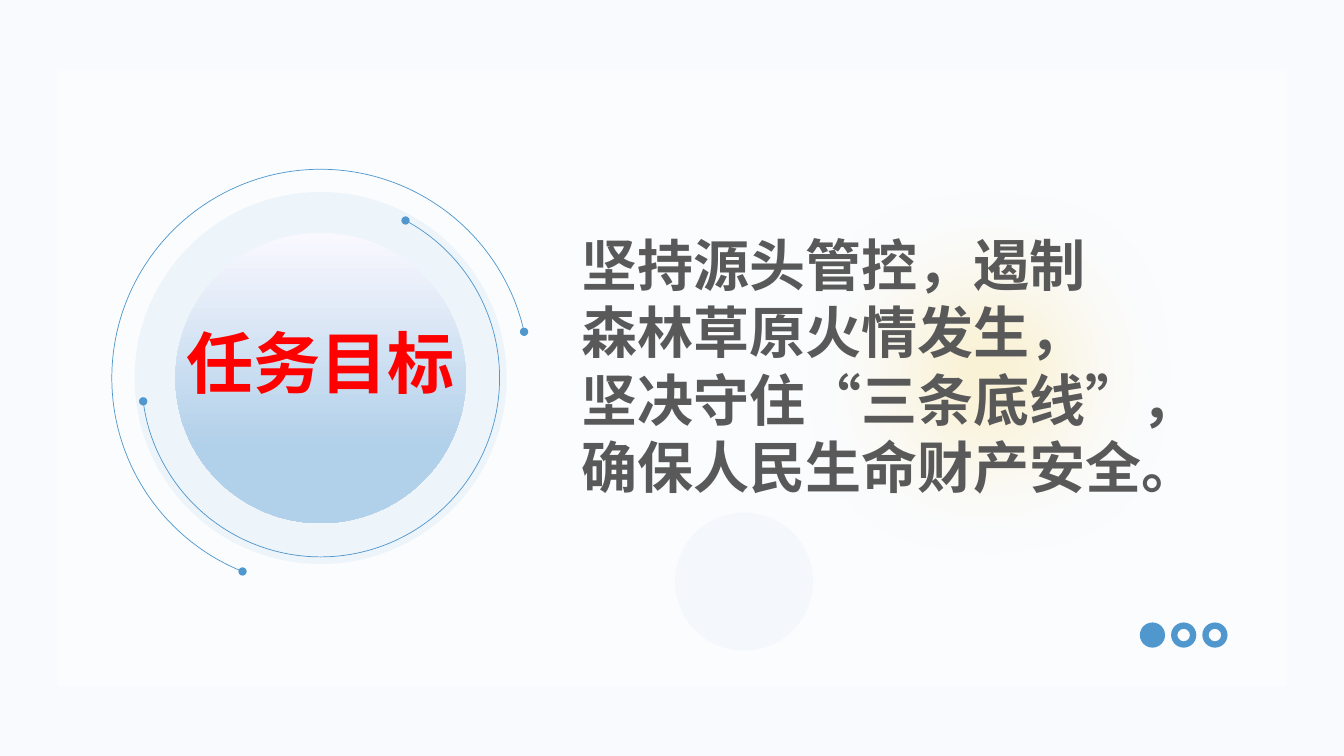
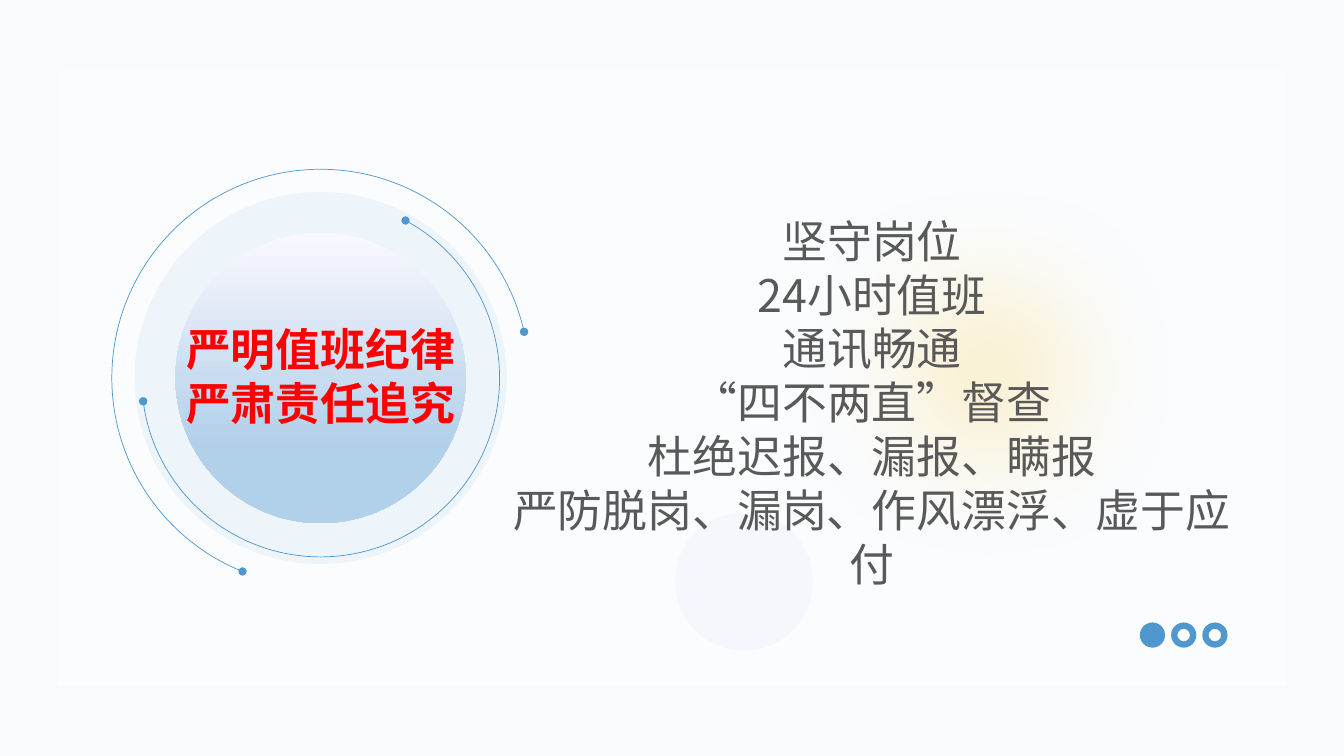
from lxml.etree import SubElement
from pptx import Presentation
from pptx.dml.color import RGBColor
from pptx.enum.shapes import MSO_SHAPE as Shape
from pptx.enum.text import PP_ALIGN as Align
from pptx.oxml.ns import qn
from pptx.util import Inches, Pt

BACKGROUND = "F8FAFE"
WHITE = "FFFFFF"
BLUE = "4F97CD"
PALE_BLUE = "B1D0E9"
LILAC_WHITE = "FAF8FF"
GOLD = "FFC000"
RED = "FF0000"
GREY = "595959"
TITLE_FONT = "Montserrat"
BODY_FONT = "Noto Sans CJK SC"
DIAL_CENTER = (3.18, 3.75)


def color(value):
    return RGBColor.from_string(value)


class SlideBuilder:
    def __init__(self, deck):
        self.deck = deck
        self.slide = None

    def new_slide(self):
        self.slide = self.deck.slides.add_slide(self.deck.slide_layouts[6])
        fill = self.slide.background.fill
        fill.solid()
        fill.fore_color.rgb = color(BACKGROUND)

    def shape(self, kind, left, top, width, height, fill=None, opacity=100):
        shape = self.slide.shapes.add_shape(
            kind, Inches(left), Inches(top), Inches(width), Inches(height))
        shape.shadow.inherit = False
        shape.line.fill.background()
        if fill is None:
            shape.fill.background()
            return shape
        shape.fill.solid()
        shape.fill.fore_color.rgb = color(fill)
        if opacity < 100:
            tint = shape.fill._xPr.find(qn("a:solidFill"))[0]
            SubElement(tint, qn("a:alpha"), val=str(opacity * 1000))
        return shape

    def circle(self, center, size, fill=None, opacity=100, kind=Shape.OVAL):
        x, y = center
        return self.shape(kind, x - size / 2, y - size / 2, size, size, fill, opacity)

    def glow(self, center, size, fill, opacity, softness):
        disc = self.circle(center, size, fill, opacity)
        effects = disc._element.spPr.find(qn("a:effectLst"))
        SubElement(effects, qn("a:softEdge"), rad=str(Inches(softness)))

    def gradient_circle(self, center, size, start, end, end_position):
        disc = self.circle(center, size)
        disc.fill.gradient()
        disc.fill.gradient_angle = 270
        first, last = disc.fill.gradient_stops
        first.color.rgb = color(start)
        last.color.rgb = color(end)
        last.position = end_position

    def arc(self, center, size, start, end):
        arc = self.circle(center, size, kind=Shape.ARC)
        arc.adjustments[0] = start * 0.6
        arc.adjustments[1] = end * 0.6
        arc.line.color.rgb = color(BLUE)
        arc.line.width = Pt(0.5)
        outline = arc.line._get_or_add_ln()
        for tag in ("a:headEnd", "a:tailEnd"):
            SubElement(outline, qn(tag), type="oval")

    def text(self, lines, left, top, width, height, size, font, ink,
             bold=False, align=Align.CENTER):
        box = self.slide.shapes.add_textbox(
            Inches(left), Inches(top), Inches(width), Inches(height))
        frame = box.text_frame
        frame.word_wrap = True
        frame.text = "\n".join(lines)
        for para in frame.paragraphs:
            para.alignment = align
            para.line_spacing = Pt(size * 1.2)
            for span in para.runs:
                span.font.size = Pt(size)
                span.font.bold = bold
                span.font.name = font
                span.font.color.rgb = color(ink)
                SubElement(span.font._element, qn("a:ea"), typeface=BODY_FONT)

    def backdrop(self):
        self.circle((7.38, 5.77), 1.37, BLUE, 6)
        self.shape(Shape.RECTANGLE, 0.57, 0.7, 12.19, 6.11, WHITE, 40)
        self.glow((9.81, 3.7), 5.16, GOLD, 34, 1.39)
        for index, kind in enumerate((Shape.OVAL, Shape.DONUT, Shape.DONUT)):
            self.circle((11.43 + index * 0.31, 6.3), 0.25, BLUE, kind=kind)

    def dial(self, title, size):
        self.circle(DIAL_CENTER, 3.69, BLUE, 7)
        self.gradient_circle(DIAL_CENTER, 2.88, LILAC_WHITE, PALE_BLUE, 0.74)
        self.arc(DIAL_CENTER, 4.14, 111.95, 347.22)
        self.arc(DIAL_CENTER, 3.55, 298.32, 172.51)
        self.text([title], 1.57, 3.14, 3.22, 1.18, size, TITLE_FONT, RED, bold=True)


def main():
    deck = Presentation()
    deck.slide_width, deck.slide_height = Inches(13.33), Inches(7.5)
    builder = SlideBuilder(deck)

    builder.new_slide()
    builder.backdrop()
    builder.dial("任务目标", 48)
    builder.text(
        ["坚持源头管控，遏制", "森林草原火情发生，", "坚决守住“三条底线”，", "确保人民生命财产安全。"],
        5.67, 2.24, 6.6, 2.77, 40, BODY_FONT, GREY, bold=True, align=Align.LEFT)

    builder.new_slide()
    builder.backdrop()
    builder.dial("严明值班纪律严肃责任追究", 32)
    builder.text(
        ["坚守岗位", "24小时值班", "通讯畅通", "“四不两直”督查", "杜绝迟报、漏报、瞒报",
         "严防脱岗、漏岗、作风漂浮、虚于应付"],
        4.8, 2.07, 7.7, 3.83, 32, BODY_FONT, GREY)

    deck.save("out.pptx")


if __name__ == "__main__":
    main()
